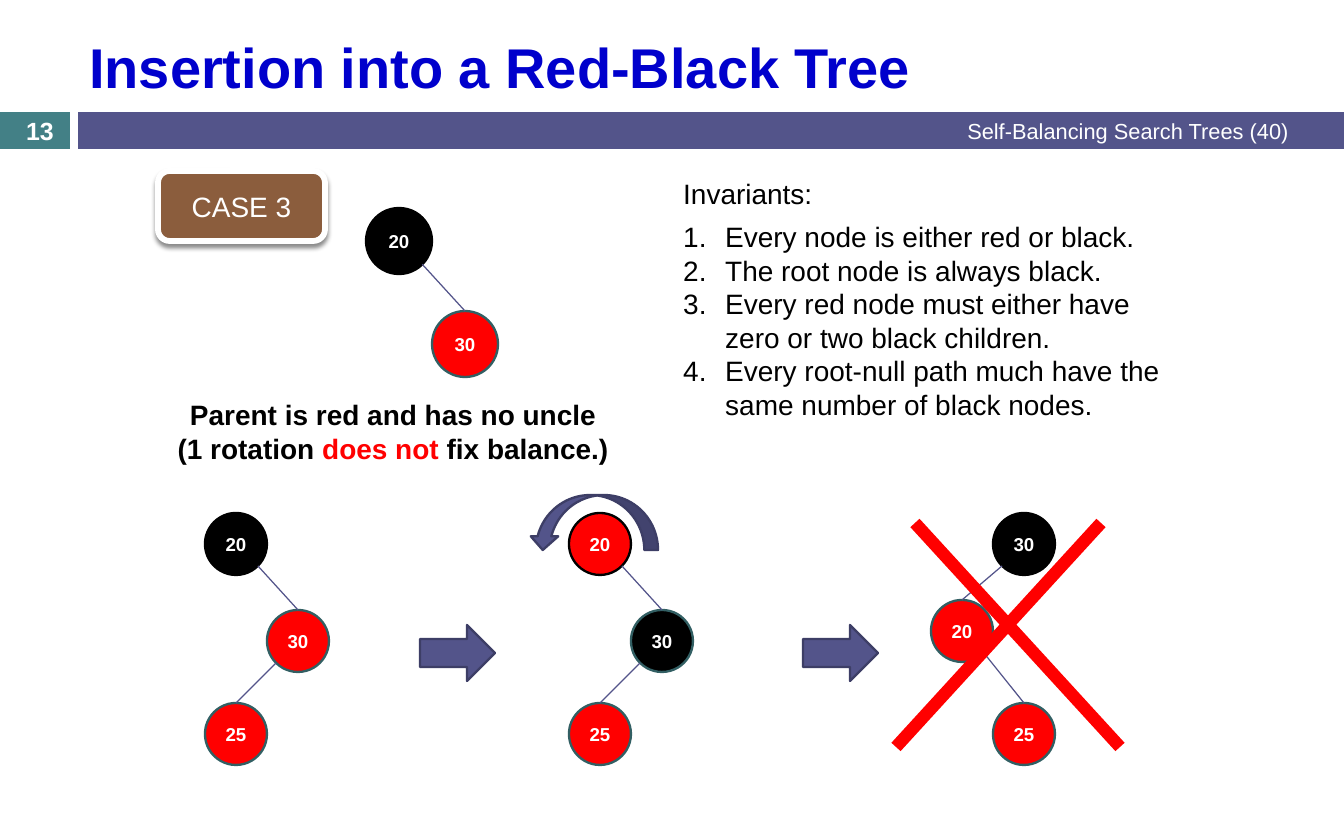
from dataclasses import dataclass
from math import sqrt

from lxml.etree import SubElement
from pptx import Presentation
from pptx.dml.color import RGBColor as Rgb
from pptx.enum.shapes import MSO_CONNECTOR as Link, MSO_SHAPE as Kind
from pptx.enum.text import MSO_ANCHOR as Anchor, MSO_AUTO_SIZE as Fit, PP_ALIGN as Align
from pptx.oxml.ns import qn
from pptx.util import Pt

SCALE = 914400 / 112  # EMU per px


@dataclass(frozen=True)
class Theme:
    font: str = "Arial"
    title: str = "0000CC"
    bar: str = "53548A"
    bar_edge: str = "3D3E66"
    teal: str = "438086"
    teal_edge: str = "325F63"
    brown: str = "8B5D3D"
    black: str = "000000"
    white: str = "FFFFFF"
    red: str = "FF0000"
    title_size: int = 36
    text_size: int = 18
    number_size: int = 16
    header_size: int = 14
    node_size: int = 12
    edge_width: float = 0.79
    line_width: float = 1.5
    cross_width: int = 8


THEME = Theme()


def px(*lengths):
    return [round(length * SCALE) for length in lengths]


def add_span(para, text, size, color, bold=False):
    span = para.add_run()
    span.text = text
    font = span.font
    font.name, font.size, font.bold = THEME.font, Pt(size), bold
    font.color.rgb = Rgb.from_string(color)


def add_text(page, box, anchor=Anchor.MIDDLE):
    frame = page.shapes.add_textbox(*px(*box)).text_frame
    frame.word_wrap = True
    frame.vertical_anchor = anchor
    return frame


def add_block(page, kind, box, fill, edge=None, width=THEME.line_width):
    block = page.shapes.add_shape(kind, *px(*box))
    block.shadow.inherit = False
    block.fill.solid()
    block.fill.fore_color.rgb = Rgb.from_string(fill)
    if edge:
        block.line.color.rgb = Rgb.from_string(edge)
        block.line.width = Pt(width)
    else:
        block.line.fill.background()
    return block


def add_label(block, text, size, bold=False):
    frame = block.text_frame
    frame.margin_left = frame.margin_right = 0
    frame.vertical_anchor = Anchor.MIDDLE
    para = frame.paragraphs[0]
    para.alignment = Align.CENTER
    add_span(para, text, size, THEME.white, bold)


def add_line(page, start, end, color, width):
    line = page.shapes.add_connector(Link.STRAIGHT, *px(*start, *end))
    line.line.color.rgb = Rgb.from_string(color)
    line.line.width = Pt(width)
    SubElement(line._element.spPr, qn("a:effectLst"))
    return line


def add_header(page, box):
    """Title above a bar with the page number and the lecture name."""
    left, top, width, height = box
    title = page.shapes.title
    title.left, title.top, title.width, title.height = px(left + 78, top - 91, 1222, 90)
    title.text_frame.vertical_anchor = Anchor.MIDDLE
    title.text_frame.auto_size = Fit.NONE
    para = title.text_frame.paragraphs[0]
    para.alignment = Align.LEFT
    add_span(para, "Insertion into a Red-Black Tree", THEME.title_size, THEME.title, True)

    add_block(page, Kind.RECTANGLE, (left, top, 70, height), THEME.teal)
    add_block(page, Kind.RECTANGLE, (left + 78, top, width - 78, height), THEME.bar)

    para = add_text(page, (left + 504, top, 796, height)).paragraphs[0]
    para.alignment = Align.RIGHT
    add_span(para, "Self-Balancing Search Trees (40)", THEME.header_size, THEME.white)
    para = add_text(page, (left, top, 80, height)).paragraphs[0]
    para.alignment = Align.CENTER
    add_span(para, "13", THEME.number_size, THEME.white, True)


def add_invariants(page, box):
    """Numbered list in the body placeholder."""
    body = page.placeholders[1]
    body.left, body.top, body.width, body.height = px(*box)
    frame = body.text_frame
    frame.auto_size = Fit.NONE
    lines = ("Invariants:",
             "Every node is either red or black.",
             "The root node is always black.",
             "Every red node must either have zero or two black children.",
             "Every root-null path much have the same number of black nodes.")
    indent = px(42)[0]
    for index, text in enumerate(lines):
        para = frame.add_paragraph() if index else frame.paragraphs[0]
        para.level = 1 if index else 0
        para.space_before = Pt(6 if index == 1 else 0)
        props = para._p.get_or_add_pPr()
        props.set("marL", str(indent if index else 0))
        props.set("indent", str(-indent if index else 0))
        if index:
            SubElement(props, qn("a:buFont"), typeface="+mj-lt")
            SubElement(props, qn("a:buAutoNum"), type="arabicPeriod")
        else:
            SubElement(props, qn("a:buNone"))
        add_span(para, text, THEME.text_size, THEME.black)


def add_badge(page, box):
    """Case label with a white rim and a soft shadow."""
    badge = add_block(page, Kind.ROUNDED_RECTANGLE, box, THEME.brown, THEME.white, 3.75)
    add_label(badge, "CASE 3", THEME.text_size)
    effects = badge._element.spPr.find(qn("a:effectLst"))
    shadow = SubElement(effects, qn("a:outerShdw"), blurRad=str(Pt(3)),
                        dist=str(Pt(2.4)), dir="5400000", rotWithShape="0")
    color = SubElement(shadow, qn("a:srgbClr"), val=THEME.black)
    SubElement(color, qn("a:alpha"), val="45000")


def add_caption(page, box):
    frame = add_text(page, box, Anchor.TOP)
    lines = ([("Parent is red and has no uncle", THEME.black)],
             [("(1 rotation ", THEME.black), ("does not ", THEME.red),
              ("fix balance.)", THEME.black)])
    for index, parts in enumerate(lines):
        para = frame.add_paragraph() if index else frame.paragraphs[0]
        para.alignment = Align.CENTER
        for text, color in parts:
            add_span(para, text, THEME.text_size, color, True)


def add_tree(page, left, top, size, nodes):
    """Chain of nodes (text, dx, dy, fill, edge), each the child of the one before."""
    circles = []
    for text, dx, dy, fill, edge in nodes:
        circle = add_block(page, Kind.OVAL, (left + dx, top + dy, size, size), fill, edge)
        add_label(circle, text, THEME.node_size, True)
        circles.append(circle)
    reach = size / 2 / sqrt(2)
    for parent, child, circle in zip(nodes, nodes[1:], circles[1:]):
        side = 1 if child[1] > parent[1] else -1
        start = (left + parent[1] + size / 2 + side * reach,
                 top + parent[2] + size / 2 + reach)
        end = (left + child[1] + size / 2, top + child[2])
        edge = add_line(page, start, end, THEME.bar, THEME.edge_width)
        edge.end_connect(circle, 0)


def add_cross(page, box):
    """Large X, narrower at the top than at the bottom."""
    left, top, width, height = box
    right, bottom, inset = left + width, top + height, 19
    for start, end in (((right - inset, top), (left, bottom)),
                       ((left + inset, top), (right, bottom))):
        add_line(page, start, end, THEME.red, THEME.cross_width)


def add_steps(page, box):
    """Three trees in a row, with the rotation, step arrows and the cross."""
    left, top = box[:2]
    red, black, teal = THEME.red, THEME.black, THEME.teal_edge
    add_block(page, Kind.CURVED_UP_ARROW, (left + 324, top - 18, 129, 55),
              THEME.bar, THEME.bar_edge).rotation = 180
    last = ("25", 0, 190, red, teal)
    trees = (
        (0, [("20", 0, 0, black, black), ("30", 62, 97, red, teal), last]),
        (364, [("20", 0, 0, red, black), ("30", 62, 97, black, teal), last]),
        (788, [("30", 0, 0, black, black), ("20", -62, 87, red, teal), last]),
    )
    for dx, nodes in trees:
        add_tree(page, left + dx, top, 62, nodes)
    for dx in (215, 598):
        add_block(page, Kind.RIGHT_ARROW, (left + dx, top + 112, 75, 56),
                  THEME.bar, THEME.bar_edge)
    add_cross(page, (left + 691, top + 10, 224, 224))


def main():
    deck = Presentation()
    deck.slide_width, deck.slide_height = px(1344, 840)
    page = deck.slides.add_slide(deck.slide_layouts[1])
    add_header(page, (0, 112, 1344, 37))
    add_badge(page, (158, 171, 167, 70))
    add_tree(page, 366, 208, 66, [("20", 0, 0, THEME.black, THEME.black),
                                  ("30", 66, 103, THEME.red, THEME.teal_edge)])
    add_invariants(page, (672, 171, 513, 259))
    add_caption(page, (140, 392, 506, 80))
    add_steps(page, (205, 513, 915, 252))
    deck.save("out.pptx")


if __name__ == "__main__":
    main()
